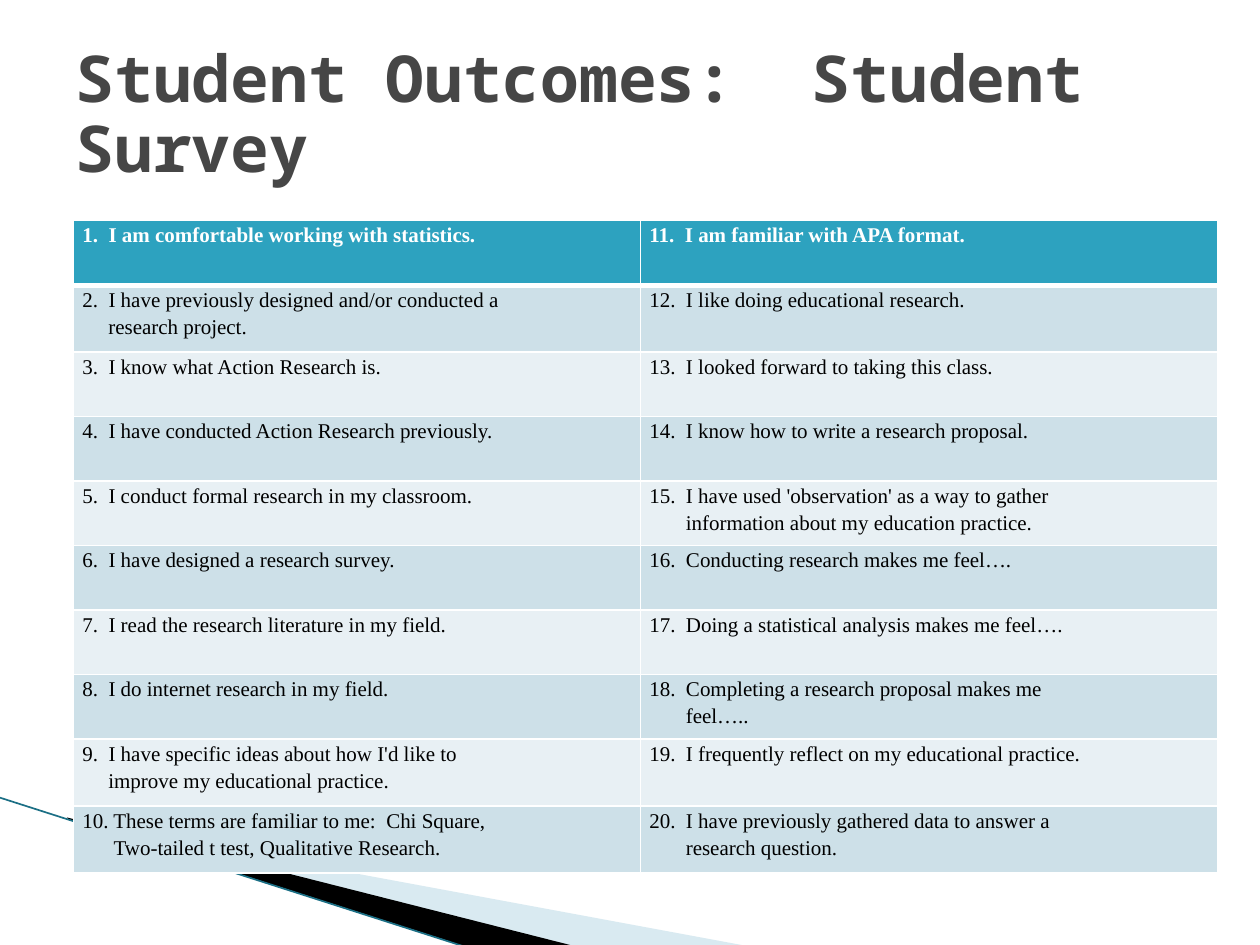
from lxml import etree
from pptx import Presentation
from pptx.dml.color import RGBColor
from pptx.enum.shapes import MSO_CONNECTOR
from pptx.enum.text import MSO_ANCHOR, MSO_AUTO_SIZE, PP_ALIGN
from pptx.oxml.ns import qn
from pptx.util import Cm, Pt

COLORS = {
    "title": "464646", "header": "2DA2BF", "band_dark": "CDE0E8",
    "band_light": "E8F0F4", "text": "000000", "white": "FFFFFF",
    "wedge_light": "A0CBDC", "wedge_dark": "000000", "edge": "1B6F85",
}
TITLE_FONT, TABLE_FONT = "Noto Sans Mono", "Times New Roman"
SPACE_WIDTH = Cm(0.21) // 2  # one space at 12 pt; a digit is twice as wide

# Each statement is a list of its lines.
STATEMENTS_LEFT = [
    ["1.  I am comfortable working with statistics."],
    ["2.  I have previously designed and/or conducted a", "research project."],
    ["3.  I know what Action Research is."],
    ["4.  I have conducted Action Research previously."],
    ["5.  I conduct formal research in my classroom."],
    ["6.  I have designed a research survey."],
    ["7.  I read the research literature in my field."],
    ["8.  I do internet research in my field."],
    ["9.  I have specific ideas about how I'd like to", "improve my educational practice."],
    ["10. These terms are familiar to me:  Chi Square,",
     "Two-tailed t test, Qualitative Research."],
]
STATEMENTS_RIGHT = [
    ["11.  I am familiar with APA format."],
    ["12.  I like doing educational research."],
    ["13.  I looked forward to taking this class."],
    ["14.  I know how to write a research proposal."],
    ["15.  I have used 'observation' as a way to gather",
     "information about my education practice."],
    ["16.  Conducting research makes me feel…."],
    ["17.  Doing a statistical analysis makes me feel…."],
    ["18.  Completing a research proposal makes me", "feel….."],
    ["19.  I frequently reflect on my educational practice."],
    ["20.  I have previously gathered data to answer a", "research question."],
]


def color(name):
    return RGBColor.from_string(COLORS[name])


def add_wedge(slide, left, top, corners, fill, alpha=None):
    points = [(left + Cm(x), top + Cm(y)) for x, y in corners]
    builder = slide.shapes.build_freeform(*points[0])
    builder.add_line_segments(points[1:])
    wedge = builder.convert_to_shape()
    wedge.shadow.inherit = False
    wedge.fill.solid()
    wedge.fill.fore_color.rgb = color(fill)
    wedge.line.fill.background()
    if alpha:
        srgb = wedge.fill._xPr.find(".//" + qn("a:srgbClr"))
        etree.SubElement(srgb, qn("a:alpha")).set("val", str(alpha * 1000))


def add_corner_decoration(slide, left, top):
    """Sloping wedges and edge line in the bottom left corner."""
    add_wedge(slide, left, top,
              [(1.4, 0.54), (15.11, 3.08), (11.58, 3.08), (1.4, 0.51)], "wedge_light", 40)
    add_wedge(slide, left, top,
              [(1.35, 0.48), (11.61, 3.08), (9.45, 3.1), (1.37, 0.51)], "wedge_dark")
    edge = slide.shapes.add_connector(MSO_CONNECTOR.STRAIGHT, left, top + Cm(0.08),
                                      left + Cm(9.42), top + Cm(3.1))
    edge.line.color.rgb = color("edge")
    edge.line.width = Pt(0.95)
    etree.SubElement(edge._element.spPr, qn("a:effectLst"))


def format_title(slide, left, top, width, height):
    title = slide.shapes.title
    title.left, title.top, title.width, title.height = left, top, width, height
    frame = title.text_frame
    frame.word_wrap = True
    frame.auto_size = MSO_AUTO_SIZE.NONE
    frame.vertical_anchor = MSO_ANCHOR.MIDDLE
    heading = frame.paragraphs[0]
    heading.alignment = PP_ALIGN.LEFT
    heading.line_spacing = 0.9
    run = heading.add_run()
    run.text = "Student Outcomes:  Student Survey"
    run.font.name, run.font.size, run.font.bold = TITLE_FONT, Pt(36.9), True
    run.font.color.rgb = color("title")


def set_borders(cell, is_header):
    properties = cell._tc.get_or_add_tcPr()
    for position, side in enumerate(("lnL", "lnR", "lnT", "lnB")):
        width = Pt(3) if is_header and side == "lnB" else Pt(1)
        border = etree.Element(qn("a:" + side), w=str(width))
        fill = etree.SubElement(border, qn("a:solidFill"))
        etree.SubElement(fill, qn("a:srgbClr")).set("val", COLORS["white"])
        properties.insert(position, border)


def hanging_indent(statement):
    """Width of the number, its full stop and the spaces behind it."""
    number, rest = statement.split(".", 1)
    spaces = len(rest) - len(rest.lstrip())
    return SPACE_WIDTH * (2 * len(number) + 1 + spaces)


def fill_cell(cell, lines, row):
    is_header = row == 0
    cell.fill.solid()
    cell.fill.fore_color.rgb = color(
        "header" if is_header else "band_dark" if row % 2 else "band_light")
    set_borders(cell, is_header)
    cell.margin_left = cell.margin_right = Cm(0.18)
    cell.margin_top = cell.margin_bottom = 0
    for index, line in enumerate(lines):
        frame = cell.text_frame
        paragraph = frame.add_paragraph() if index else frame.paragraphs[0]
        paragraph.line_spacing = 1.15
        if index:
            paragraph._p.get_or_add_pPr().set("marL", str(hanging_indent(lines[0])))
        run = paragraph.add_run()
        run.text = line
        run.font.name, run.font.size, run.font.bold = TABLE_FONT, Pt(12), is_header
        run.font.color.rgb = color("white" if is_header else "text")


def add_survey_table(slide, left, top, width, height):
    columns = (STATEMENTS_LEFT, STATEMENTS_RIGHT)
    survey = slide.shapes.add_table(len(STATEMENTS_LEFT), len(columns),
                                    left, top, width, height).table
    survey.columns[0].width = Cm(11.43)
    survey.columns[1].width = width - Cm(11.43)
    for row, statements in enumerate(zip(*columns)):
        survey.rows[row].height = Cm(1.35) if row in (1, 8, 9) else Cm(1.3)
        for column, lines in enumerate(statements):
            fill_cell(survey.cell(row, column), lines, row)


def main():
    presentation = Presentation()
    presentation.slide_width, presentation.slide_height = Cm(25.4), Cm(19.05)
    slide = presentation.slides.add_slide(presentation.slide_layouts[5])
    add_corner_decoration(slide, Cm(0), Cm(16))
    add_survey_table(slide, Cm(1.48), Cm(4.45), Cm(23.06), Cm(13.15))
    format_title(slide, Cm(1.27), Cm(0.76), Cm(22.86), Cm(3.18))
    presentation.save("out.pptx")


if __name__ == "__main__":
    main()
